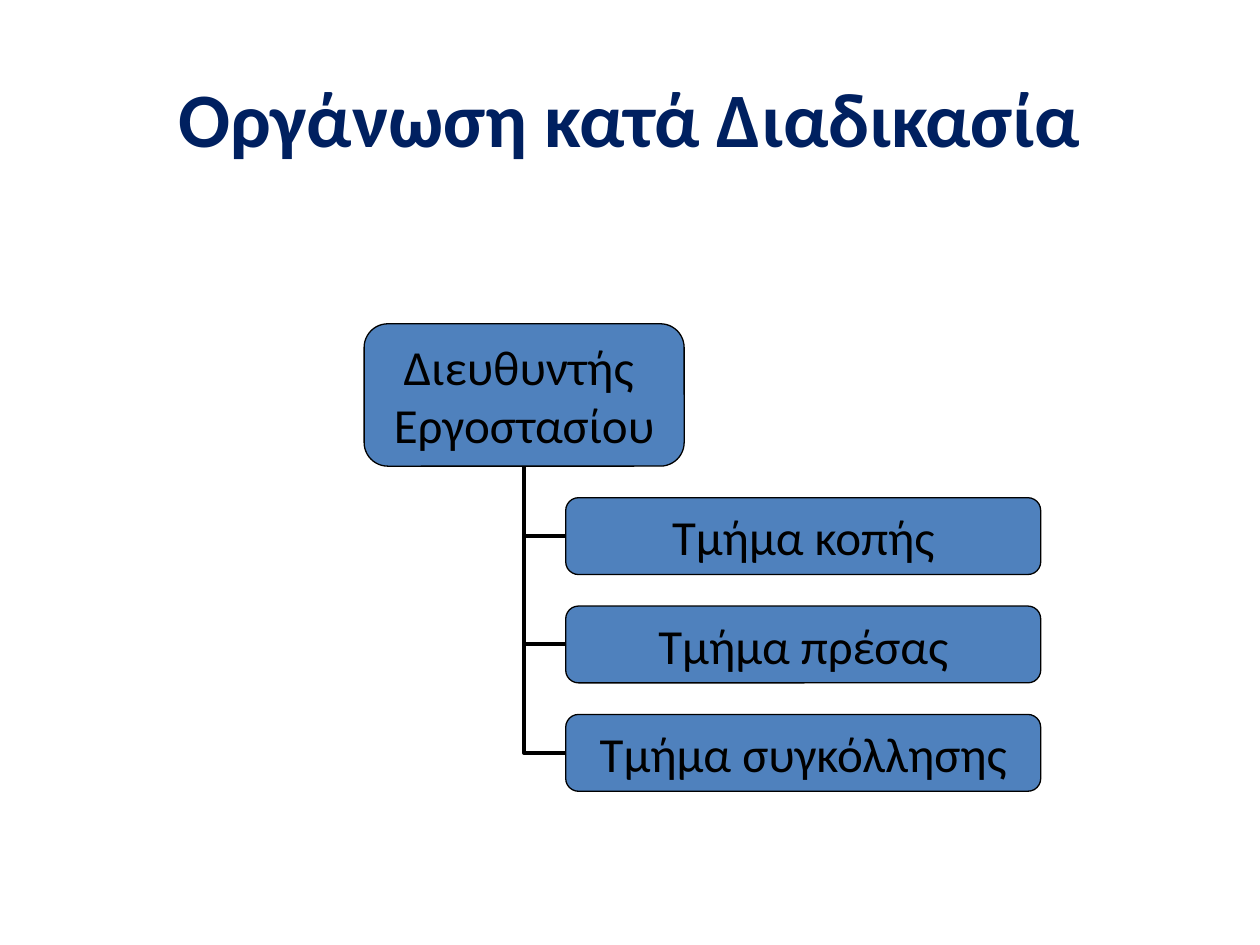
from pptx import Presentation
from pptx.dml.color import RGBColor as RGB
from pptx.enum.shapes import MSO_CONNECTOR as CONN, MSO_SHAPE as SHAPE
from pptx.enum.text import MSO_ANCHOR as ANCHOR, PP_ALIGN as ALIGN
from pptx.oxml.ns import qn
from pptx.util import Inches, Pt
from lxml.etree import SubElement

TITLE = "Οργάνωση κατά Διαδικασία"
MANAGER = ["Διευθυντής ", "Εργοστασίου"]
DEPARTMENTS = ["Τμήμα κοπής", "Τμήμα πρέσας", "Τμήμα συγκόλλησης"]

THEME = {
    "title": {"name": "Calibri", "size": Pt(44), "bold": True, "color": RGB(0x00, 0x20, 0x60)},
    "box": {"name": "Calibri", "size": Pt(28), "bold": False, "color": RGB(0, 0, 0)},
    "fill": RGB(0x4F, 0x81, 0xBD),
    "line": RGB(0, 0, 0),
    "border": Pt(0.75),
    "link": Pt(2.25),
}
BOX_FRAME = {
    "margin_left": Inches(0.08), "margin_right": Inches(0.08),
    "margin_top": Inches(0.04), "margin_bottom": Inches(0.04),
    "word_wrap": False,
}

# Slide and chart grid, in inches
WIDTH, HEIGHT = 10, 7.5
TITLE_AREA = (0.05 * WIDTH, 0.04 * HEIGHT, 0.9 * WIDTH, HEIGHT / 6)
MANAGER_AREA = (2.89, 2.57, 2.54, 1.13)
DEPT_LEFT, DEPT_WIDTH, DEPT_HEIGHT = 4.49, 3.77, 0.61
GAP = 0.25
DEPT_TOP = MANAGER_AREA[1] + MANAGER_AREA[3] + GAP


def write(sp, lines, font, frame):
    tf = sp.text_frame
    tf.vertical_anchor = ANCHOR.MIDDLE
    for key, value in frame.items():
        setattr(tf, key, value)
    for i, line in enumerate(lines):
        p = tf.add_paragraph() if i else tf.paragraphs[0]
        p.alignment = ALIGN.CENTER
        r = p.add_run()
        r.text = line
        for key, value in font.items():
            if key == "color":
                r.font.color.rgb = value
            else:
                setattr(r.font, key, value)


def add_box(s, area, lines):
    sp = s.shapes.add_shape(SHAPE.ROUNDED_RECTANGLE, *map(Inches, area))
    sp.shadow.inherit = False
    sp.fill.solid()
    sp.fill.fore_color.rgb = THEME["fill"]
    sp.line.color.rgb = THEME["line"]
    sp.line.width = THEME["border"]
    write(sp, lines, THEME["box"], BOX_FRAME)
    return sp


def link(s, child, parent):
    """Join the child's left side to the parent's bottom with one right angle."""
    c = s.shapes.add_connector(CONN.ELBOW, 0, 0, 0, 0)
    c.begin_connect(child, 1)
    c.end_connect(parent, 2)
    c.line.color.rgb = THEME["line"]
    c.line.width = THEME["link"]
    sp_pr = c._element.spPr
    sp_pr.find(qn("a:prstGeom")).set("prst", "bentConnector2")
    SubElement(sp_pr, qn("a:effectLst"))


def main():
    prs = Presentation()
    prs.slide_width, prs.slide_height = Inches(WIDTH), Inches(HEIGHT)
    s = prs.slides.add_slide(prs.slide_layouts[6])

    title = s.shapes.add_textbox(*map(Inches, TITLE_AREA))
    write(title, [TITLE], THEME["title"], {"word_wrap": True})

    manager = add_box(s, MANAGER_AREA, MANAGER)
    for row, name in enumerate(DEPARTMENTS):
        top = DEPT_TOP + row * (DEPT_HEIGHT + GAP)
        dept = add_box(s, (DEPT_LEFT, top, DEPT_WIDTH, DEPT_HEIGHT), [name])
        link(s, dept, manager)

    prs.save("out.pptx")


if __name__ == "__main__":
    main()
